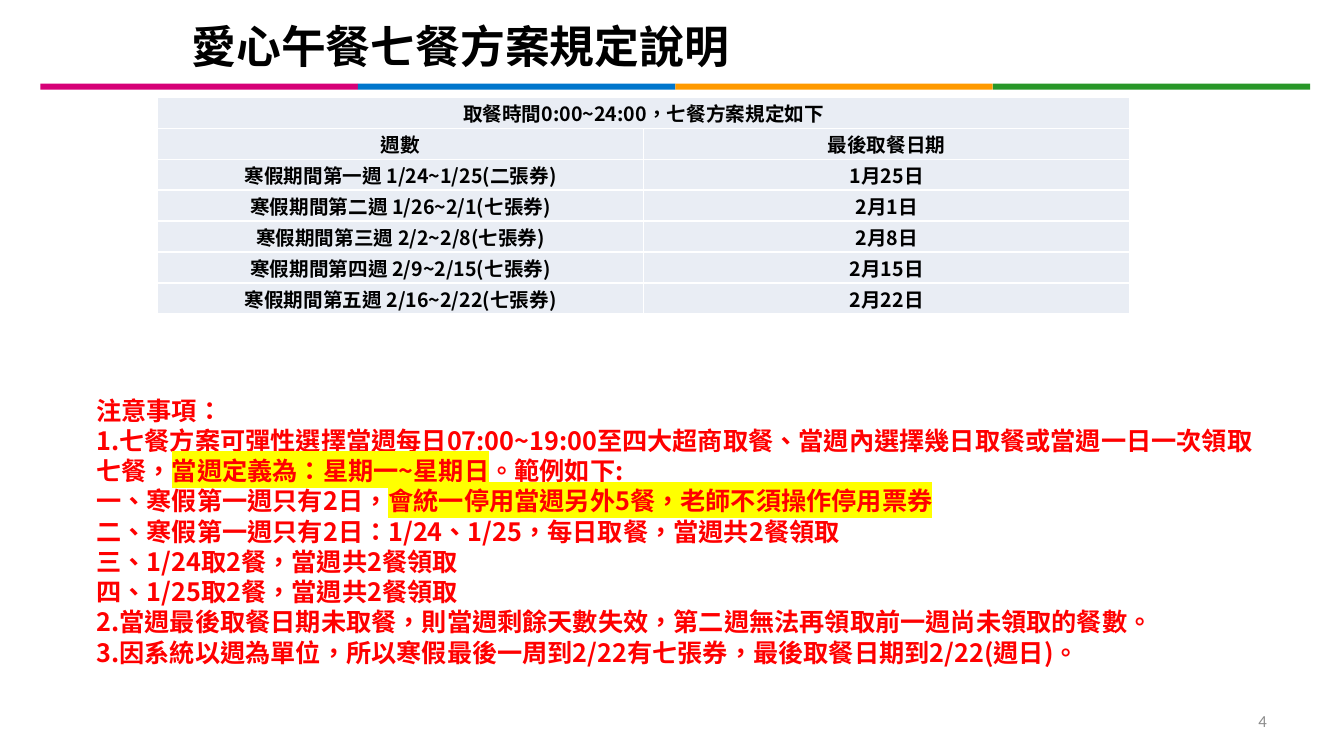
import pptx
import pptx.dml.color
import pptx.enum.lang
import pptx.enum.shapes
import pptx.enum.text
import pptx.util
from dataclasses import dataclass
from lxml import etree
from pptx.util import Cm

ALIGN = pptx.enum.text.PP_ALIGN
MIDDLE = pptx.enum.text.MSO_ANCHOR.MIDDLE
A = "{http://schemas.openxmlformats.org/drawingml/2006/main}"


@dataclass(frozen=True)
class Theme:
    title_font: str = "Calibri"
    body_font: str = "Noto Sans CJK SC"
    ink: str = "000000"
    alert: str = "FF0000"
    marker: str = "FFFF00"
    muted: str = "8C8C8C"
    cell: str = "E9EDF4"
    bars: tuple = ("D60077", "0076CC", "FF9A00", "289728")
    title_size: float = 32
    note_size: float = 18
    note_leading: float = 21.6
    table_size: float = 14
    number_size: float = 12


def rgb(value):
    return pptx.dml.color.RGBColor.from_string(value)


class SlideBuilder:
    def __init__(self, prs, theme):
        self.theme = theme
        self.s = prs.slides.add_slide(prs.slide_layouts[5])

    def run(self, p, text, size, color, font, bold=True, marker=None):
        r = p.add_run()
        r.text = text
        r.font.size = pptx.util.Pt(size)
        r.font.bold = bold
        r.font.language_id = pptx.enum.lang.MSO_LANGUAGE_ID.TRADITIONAL_CHINESE
        r.font.color.rgb = rgb(color)
        rpr = r.font._element
        if marker:
            highlight = etree.SubElement(rpr, A + "highlight")
            etree.SubElement(highlight, A + "srgbClr", val=marker)
        r.font.name = font
        etree.SubElement(rpr, A + "ea", typeface=font)

    def title(self, text, left, top, width, height):
        sp = self.s.shapes.title
        sp.left, sp.top, sp.width, sp.height = left, top, width, height
        tf = sp.text_frame
        tf.vertical_anchor = MIDDLE
        p = tf.paragraphs[0]
        p.alignment = ALIGN.LEFT
        self.run(p, text, self.theme.title_size, self.theme.ink, self.theme.title_font)

    def bar(self, color, left, top, width, height):
        sp = self.s.shapes.add_shape(
            pptx.enum.shapes.MSO_SHAPE.RECTANGLE, left, top, width, height)
        sp.shadow.inherit = False
        sp.fill.solid()
        sp.fill.fore_color.rgb = rgb(color)
        sp.line.fill.background()

    def table(self, heading, rows, left, top, width, row_height):
        count = len(rows) + 1
        table = self.s.shapes.add_table(
            count, 2, left, top, width, row_height * count).table
        table.first_row = table.horz_banding = False
        table.cell(0, 0).merge(table.cell(0, 1))
        for i, texts in enumerate([(heading, "")] + rows):
            for j, text in enumerate(texts):
                cell = table.cell(i, j)
                cell.fill.solid()
                cell.fill.fore_color.rgb = rgb(self.theme.cell)
                cell.vertical_anchor = MIDDLE
                cell.margin_left = cell.margin_right = cell.margin_top = Cm(0.02)
                cell.margin_bottom = 0
                if text:
                    p = cell.text_frame.paragraphs[0]
                    p.alignment = ALIGN.CENTER
                    self.run(p, text, self.theme.table_size, self.theme.ink,
                             self.theme.body_font)

    def text_box(self, left, top, width, height):
        tf = self.s.shapes.add_textbox(left, top, width, height).text_frame
        tf.word_wrap = True
        return tf

    def notes(self, paragraphs, left, top, width, height):
        tf = self.text_box(left, top, width, height)
        for i, lines in enumerate(paragraphs):
            p = tf.add_paragraph() if i else tf.paragraphs[0]
            p.line_spacing = pptx.util.Pt(self.theme.note_leading)
            for k, line in enumerate(lines):
                if k:
                    p.add_line_break()
                # Odd pieces between bars are highlighted
                for n, piece in enumerate(line.split("|")):
                    if piece:
                        self.run(p, piece, self.theme.note_size, self.theme.alert,
                                 self.theme.body_font,
                                 marker=self.theme.marker if n % 2 else None)

    def page_number(self, text, left, top, width, height):
        tf = self.text_box(left, top, width, height)
        tf.vertical_anchor = MIDDLE
        p = tf.paragraphs[0]
        p.alignment = ALIGN.RIGHT
        self.run(p, text, self.theme.number_size, self.theme.muted,
                 self.theme.title_font, bold=False)


WEEKS = [
    ("週數", "最後取餐日期"),
    ("寒假期間第一週 1/24~1/25(二張券)", "1月25日"),
    ("寒假期間第二週 1/26~2/1(七張券)", "2月1日"),
    ("寒假期間第三週 2/2~2/8(七張券)", "2月8日"),
    ("寒假期間第四週 2/9~2/15(七張券)", "2月15日"),
    ("寒假期間第五週 2/16~2/22(七張券)", "2月22日"),
]

NOTES = [
    ["注意事項："],
    ["1.七餐方案可彈性選擇當週每日07:00~19:00至四大超商取餐、當週內選擇幾日取餐或當週一日一次領取七餐，"
     "|當週定義為：星期一~星期日|。範例如下:"],
    ["一、寒假第一週只有2日，|會統一停用當週另外5餐，老師不須操作停用票券|",
     "二、寒假第一週只有2日：1/24、1/25，每日取餐，當週共2餐領取",
     "三、1/24取2餐，當週共2餐領取",
     "四、1/25取2餐，當週共2餐領取",
     "2.當週最後取餐日期未取餐，則當週剩餘天數失效，第二週無法再領取前一週尚未領取的餐數。"],
    ["3.因系統以週為單位，所以寒假最後一周到2/22有七張券，最後取餐日期到2/22(週日)。"],
]


def main():
    prs = pptx.Presentation()
    prs.slide_width, prs.slide_height = Cm(33.87), Cm(19.05)
    theme = Theme()
    page = SlideBuilder(prs, theme)

    # Title and coloured rule
    page.title("愛心午餐七餐方案規定說明", Cm(4.57), Cm(0.25), Cm(27.64), Cm(1.8))
    bar_width = Cm(8)
    for i, color in enumerate(theme.bars):
        page.bar(color, Cm(1.02) + i * bar_width, Cm(2.11), bar_width, Cm(0.15))

    # Weekly deadlines
    page.table("取餐時間0:00~24:00，七餐方案規定如下", WEEKS,
               Cm(3.97), Cm(2.45), Cm(24.5), Cm(0.78))

    # Rules and page number
    page.notes(NOTES, Cm(2.18), Cm(9.83), Cm(29.7), Cm(7.19))
    page.page_number("4", Cm(24.28), Cm(17.65), Cm(7.9), Cm(1.02))

    prs.save("out.pptx")


if __name__ == "__main__":
    main()
